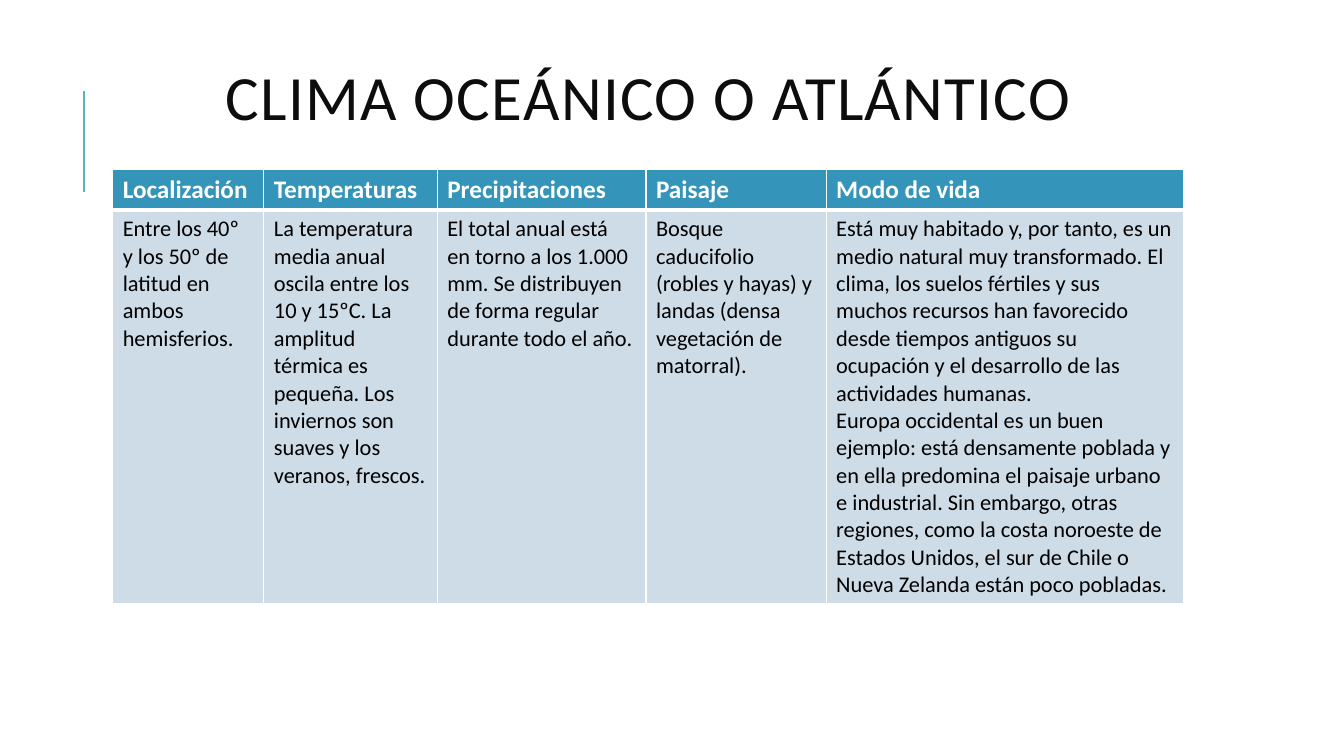
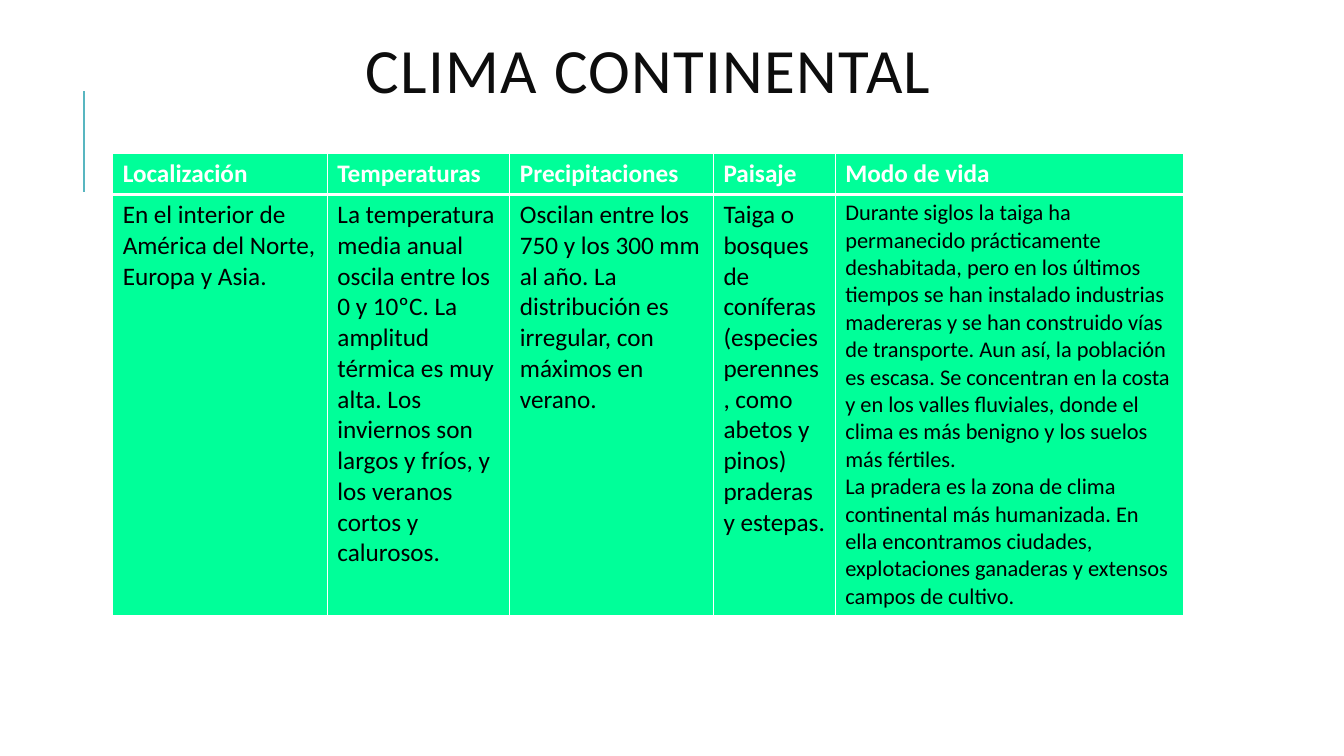
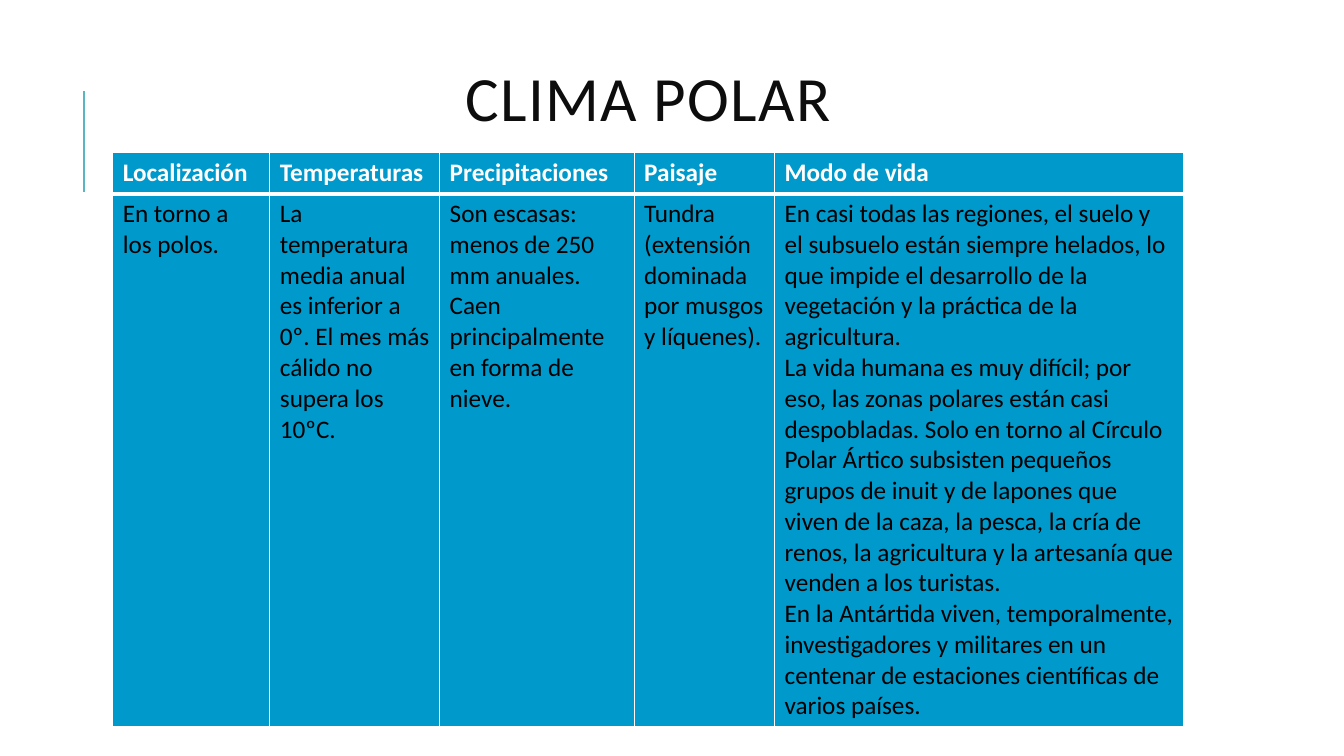
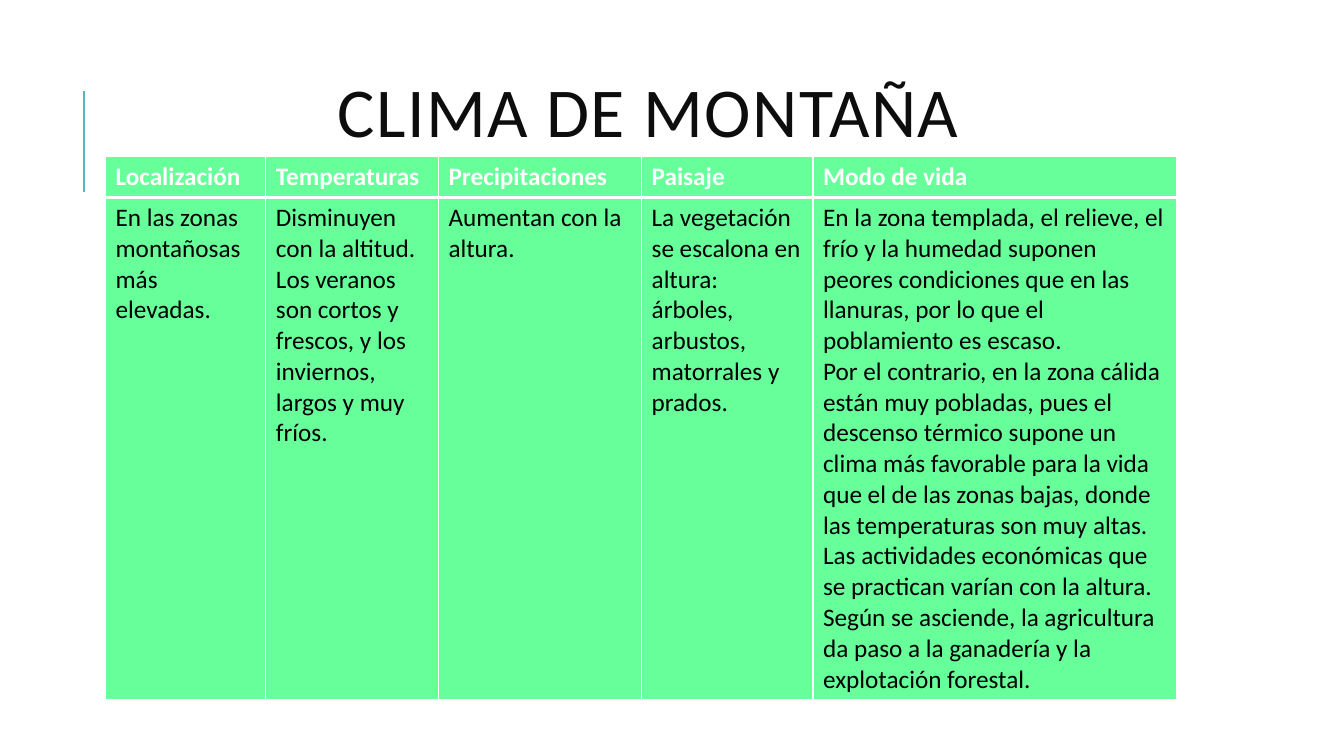
"""Builds four slides comparing climates, each with one table."""
from lxml import etree
from pptx import Presentation
from pptx import util as u
from pptx.dml.color import RGBColor
from pptx.enum import shapes, text
from pptx.oxml.ns import qn

HEADERS = ["Localización", "Temperaturas", "Precipitaciones", "Paisaje", "Modo de vida"]

CLIMATES = [
    dict(
        title="CLIMA OCEÁNICO O ATLÁNTICO", title_box=(1.63, 1.9), title_size=45,
        left=2.84, top=4.27, body_height=9.9, widths=[3.81, 4.37, 5.26, 4.54],
        fills=("3494BA", "CEDCE7"), sizes=[16] * 5,
        cells=[
            ["Entre los 40º y los 50º de latitud en ambos hemisferios."],
            ["La temperatura media anual oscila entre los 10 y 15ºC. La amplitud térmica es "
             "pequeña. Los inviernos son suaves y los veranos, frescos."],
            ["El total anual está en torno a los 1.000 mm. Se distribuyen de forma regular "
             "durante todo el año."],
            ["Bosque caducifolio (robles y hayas) y landas (densa vegetación de matorral)."],
            ["Está muy habitado y, por tanto, es un medio natural muy transformado. El clima, "
             "los suelos fértiles y sus muchos recursos han favorecido desde tiempos antiguos "
             "su ocupación y el desarrollo de las actividades humanas.",
             "Europa occidental es un buen ejemplo: está densamente poblada y en ella predomina "
             "el paisaje urbano e industrial. Sin embargo, otras regiones, como la costa "
             "noroeste de Estados Unidos, el sur de Chile o Nueva Zelanda están poco pobladas."],
        ]),
    dict(
        title="CLIMA CONTINENTAL", title_box=(0.91, 1.98), title_size=45,
        left=2.84, top=3.87, body_height=10.6, widths=[5.41, 4.6, 5.13, 3.07],
        fills=("00FF99", "00FF99"), sizes=[18] * 4 + [16],
        cells=[
            ["En el interior de América del Norte, Europa y Asia."],
            ["La temperatura media anual oscila entre los 0 y 10ºC. La amplitud térmica es muy "
             "alta. Los inviernos son largos y fríos, y los veranos cortos y calurosos."],
            ["Oscilan entre los 750 y los 300 mm al año. La distribución es irregular, con "
             "máximos en verano."],
            ["Taiga o bosques de coníferas (especies perennes, como abetos y pinos) praderas y "
             "estepas."],
            ["Durante siglos la taiga ha permanecido prácticamente deshabitada, pero en los "
             "últimos tiempos se han instalado industrias madereras y se han construido vías de "
             "transporte. Aun así, la población es escasa. Se concentran en la costa y en los "
             "valles fluviales, donde el clima es más benigno y los suelos más fértiles.",
             "La pradera es la zona de clima continental más humanizada. En ella encontramos "
             "ciudades, explotaciones ganaderas y extensos campos de cultivo."],
        ]),
    dict(
        title="CLIMA POLAR", title_box=(1.63, 1.96), title_size=45,
        left=2.84, top=3.85, body_height=13.4, widths=[3.96, 4.28, 4.9, 3.54],
        fills=("0099CC", "0099CC"), sizes=[18] * 5,
        cells=[
            ["En torno a los polos."],
            ["La temperatura media anual es inferior a 0º. El mes más cálido no supera los "
             "10ºC."],
            ["Son escasas: menos de 250 mm anuales. Caen principalmente en forma de nieve."],
            ["Tundra (extensión dominada por musgos y líquenes)."],
            ["En casi todas las regiones, el suelo y el subsuelo están siempre helados, lo que "
             "impide el desarrollo de la vegetación y la práctica de la agricultura.",
             "La vida humana es muy difícil; por eso, las zonas polares están casi despobladas. "
             "Solo en torno al Círculo Polar Ártico subsisten pequeños grupos de inuit y de "
             "lapones que viven de la caza, la pesca, la cría de renos, la agricultura y la "
             "artesanía que venden a los turistas.",
             "En la Antártida viven, temporalmente, investigadores y militares en un centenar "
             "de estaciones científicas de varios países."],
        ]),
    dict(
        title="CLIMA DE MONTAÑA", title_box=(1.63, 2.67), title_size=50,
        left=2.66, top=3.95, body_height=12.6, widths=[4.04, 4.35, 5.12, 4.32],
        fills=("66FF99", "66FF99"), sizes=[18] * 5,
        cells=[
            ["En las zonas montañosas más elevadas."],
            ["Disminuyen con la altitud. Los veranos son cortos y frescos, y los inviernos, "
             "largos y muy fríos."],
            ["Aumentan con la altura."],
            ["La vegetación se escalona en altura: árboles, arbustos, matorrales y prados."],
            ["En la zona templada, el relieve, el frío y la humedad suponen peores condiciones "
             "que en las llanuras, por lo que el poblamiento es escaso.",
             "Por el contrario, en la zona cálida están muy pobladas, pues el descenso térmico "
             "supone un clima más favorable para la vida que el de las zonas bajas, donde las "
             "temperaturas son muy altas.",
             "Las actividades económicas que se practican varían con la altura. Según se "
             "asciende, la agricultura da paso a la ganadería y la explotación forestal."],
        ]),
]


def rgb(color):
    """Turn a hex string into a colour."""
    return RGBColor.from_string(color)


class Deck:
    """Holds the shared style and the current slide."""

    FONT, INK, BLACK, WHITE, ACCENT = "Calibri", "0D0D0D", "000000", "FFFFFF", "58B6C0"
    LEFT, WIDTH, HEADER_HEIGHT = 2.84, 27, 1.03

    def __init__(self):
        """Start an empty widescreen presentation."""
        self.prs = Presentation()
        self.prs.slide_width, self.prs.slide_height = u.Cm(33.87), u.Cm(19.05)
        self.s = None

    def slide(self):
        """Add a title-only slide with the accent rule."""
        self.s = self.prs.slides.add_slide(self.prs.slide_layouts[5])
        line = self.s.shapes.add_connector(
            shapes.MSO_CONNECTOR.STRAIGHT, u.Cm(2.12), u.Cm(4.83), u.Cm(2.12), u.Cm(2.29))
        line.line.color.rgb = rgb(self.ACCENT)
        line.line.width = u.Pt(1.5)
        etree.SubElement(line._element.spPr, qn("a:effectLst"))

    def run(self, p, words, size, color, bold=False):
        """Add one formatted run to a paragraph."""
        r = p.add_run()
        r.text = words
        r.font.name, r.font.size, r.font.bold = self.FONT, u.Pt(size), bold
        r.font.color.rgb = rgb(color)
        return r

    def title(self, words, top, height, size):
        """Place and fill the title placeholder."""
        sp = self.s.shapes.title
        sp.left, sp.top = u.Cm(self.LEFT), u.Cm(top)
        sp.width, sp.height = u.Cm(self.WIDTH), u.Cm(height)
        tf = sp.text_frame
        tf.word_wrap, tf.auto_size = True, text.MSO_AUTO_SIZE.NONE
        tf.vertical_anchor = text.MSO_ANCHOR.MIDDLE
        p = tf.paragraphs[0]
        p.alignment, p.line_spacing = text.PP_ALIGN.CENTER, 0.8
        self.run(p, words, size, self.INK)._r.get_or_add_rPr().set("spc", "100")

    def borders(self, cell, **widths):
        """Draw white cell borders, one point wide unless given."""
        props = cell._tc.get_or_add_tcPr()
        for side in "LRTB":
            ln = etree.SubElement(props, qn(f"a:ln{side}"), w=str(u.Pt(widths.get(side, 1))))
            fill = etree.SubElement(ln, qn("a:solidFill"))
            etree.SubElement(fill, qn("a:srgbClr"), val=self.WHITE)

    def cell(self, cell, paragraphs, size, color, fill, bold=False, **widths):
        """Fill one table cell."""
        self.borders(cell, **widths)
        cell.fill.solid()
        cell.fill.fore_color.rgb = rgb(fill)
        tf = cell.text_frame
        for i, words in enumerate(paragraphs):
            p = tf.add_paragraph() if i else tf.paragraphs[0]
            self.run(p, words, size, color, bold)

    def table(self, left, top, body_height, widths, fills, sizes, cells):
        """Add the climate table; the last column takes the remaining width."""
        frame = self.s.shapes.add_table(
            2, len(HEADERS), u.Cm(left), u.Cm(top), u.Cm(self.WIDTH),
            u.Cm(self.HEADER_HEIGHT + body_height))
        table = frame.table
        table.horz_banding = False
        for row, height in zip(table.rows, (self.HEADER_HEIGHT, body_height)):
            row.height = u.Cm(height)
        for column, width in zip(table.columns, widths + [self.WIDTH - sum(widths)]):
            column.width = u.Cm(width)
        for i, (header, body, size) in enumerate(zip(HEADERS, cells, sizes)):
            self.cell(table.cell(0, i), [header], 18, self.WHITE, fills[0], True, B=3)
            self.cell(table.cell(1, i), body, size, self.BLACK, fills[1], T=3)


def main():
    """Build and save the slides."""
    deck = Deck()
    for climate in CLIMATES:
        deck.slide()
        deck.title(climate["title"], *climate["title_box"], climate["title_size"])
        deck.table(*(climate[key] for key in (
            "left", "top", "body_height", "widths", "fills", "sizes", "cells")))
    deck.prs.save("out.pptx")


if __name__ == "__main__":
    main()
